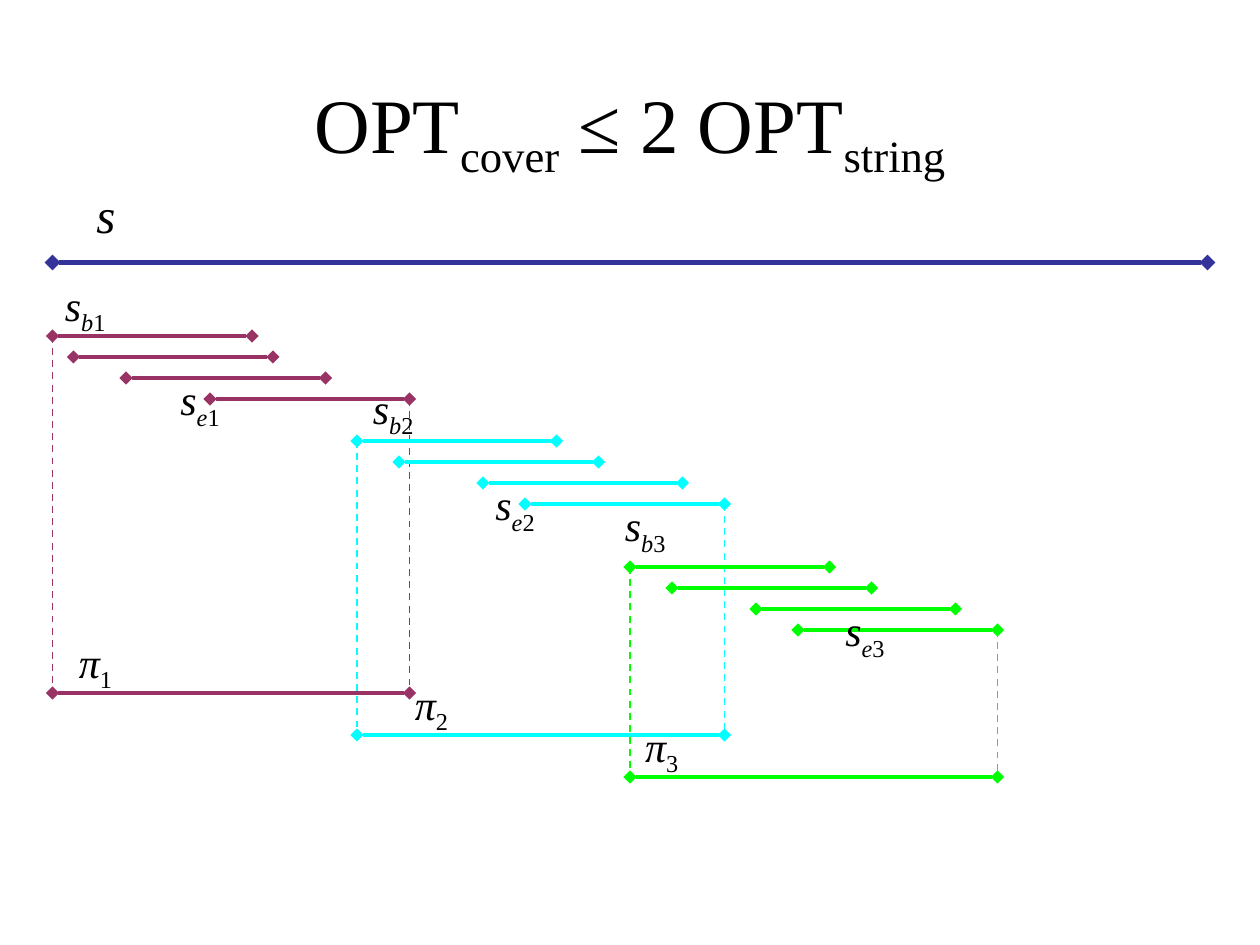
import lxml.etree
import pptx
import pptx.dml.color
import pptx.enum.dml
import pptx.enum.shapes
import pptx.enum.text
import pptx.oxml.ns
import pptx.util

Pt = pptx.util.Pt
FONT = "Times New Roman"
BLACK = "000000"
NAVY = "333399"
READ_LENGTH = 114
ROW_STEP = 12
LABEL_HEIGHT = 36


def color(hex_value):
    return pptx.dml.color.RGBColor.from_string(hex_value)


def add_runs(paragraph, runs, size):
    for text, italic, subscript in runs:
        run = paragraph.add_run()
        run.text = text
        run.font.name = FONT
        run.font.size = Pt(size)
        run.font.italic = italic
        run.font.color.rgb = color(BLACK)
        if subscript:
            run._r.get_or_add_rPr().set("baseline", "-25000")


def add_line(slide, start, end, line_color, width):
    connector = slide.shapes.add_connector(
        pptx.enum.shapes.MSO_CONNECTOR.STRAIGHT, *map(Pt, start + end))
    connector.line.color.rgb = color(line_color)
    connector.line.width = Pt(width)
    properties = connector._element.spPr
    lxml.etree.SubElement(properties, pptx.oxml.ns.qn("a:effectLst"))
    return connector


def add_segment(slide, left, top, length, line_color, width=2.5):
    connector = add_line(slide, (left, top), (left + length, top), line_color, width)
    outline = connector.line._get_or_add_ln()
    for tag in ("a:headEnd", "a:tailEnd"):
        lxml.etree.SubElement(outline, pptx.oxml.ns.qn(tag), type="diamond")


def add_guide(slide, left, top, bottom, line_color):
    connector = add_line(slide, (left, top), (left, bottom), line_color, 1)
    connector.line.dash_style = pptx.enum.dml.MSO_LINE.DASH


def add_label(slide, left, top, width, height, runs, size=24):
    shape = slide.shapes.add_textbox(Pt(left), Pt(top), Pt(width), Pt(height))
    frame = shape.text_frame
    frame.word_wrap = False
    frame.auto_size = pptx.enum.text.MSO_AUTO_SIZE.SHAPE_TO_FIT_TEXT
    add_runs(frame.paragraphs[0], runs, size)


def add_title(slide, left, top, width, height):
    title = slide.shapes.title
    title.left, title.top, title.width, title.height = map(Pt, (left, top, width, height))
    title.text_frame.vertical_anchor = pptx.enum.text.MSO_ANCHOR.MIDDLE
    paragraph = title.text_frame.paragraphs[0]
    paragraph.alignment = pptx.enum.text.PP_ALIGN.CENTER
    add_runs(paragraph, [("OPT", False, False), ("cover", False, True),
                         (" ≤ 2 OPT", False, False), ("string", False, True)], 44)


def add_superstring(slide, left, top, length):
    add_segment(slide, left, top, length, NAVY, 3)
    add_label(slide, left + 18, top - 48, 25, 41, [("s", True, False)], 28)


def add_group(slide, left, top, height, number, line_color, offsets, label_positions):
    for row, offset in enumerate(offsets):
        add_segment(slide, left + offset, top + row * ROW_STEP, READ_LENGTH, line_color)

    width = offsets[-1] + READ_LENGTH
    bottom = top + height
    last_row = top + (len(offsets) - 1) * ROW_STEP
    add_guide(slide, left, top, bottom, line_color)
    add_guide(slide, left + width, last_row, bottom, line_color)
    add_segment(slide, left, bottom, width, line_color)

    index = (number, False, True)
    labels = [
        (39.5, [("s", True, False), ("b", True, True), index]),
        (39, [("s", True, False), ("e", True, True), index]),
        (34.5, [("π", True, False), index]),
    ]
    for (label_width, runs), (across, down) in zip(labels, label_positions):
        add_label(slide, left + across, top + down, label_width, LABEL_HEIGHT, runs)


def main():
    presentation = pptx.Presentation()
    presentation.slide_width = Pt(720)
    presentation.slide_height = Pt(540)
    slide = presentation.slides.add_slide(presentation.slide_layouts[5])

    add_title(slide, 36, 21.6, 648, 104.4)
    add_superstring(slide, 30, 150, 660)
    groups = [
        (30, 192, 204, "1", "993366", (0, 12, 42, 90), ((0, -36), (66, 18), (8, 168))),
        (204, 252, 168, "2", "00FFFF", (0, 24, 72, 96), ((2, -37), (72, 18), (26, 132))),
        (360, 324, 120, "3", "00FF00", (0, 24, 72, 96), ((-10, -42), (116, 18), (1.5, 84))),
    ]
    for group in groups:
        add_group(slide, *group)

    presentation.save("out.pptx")


if __name__ == "__main__":
    main()
